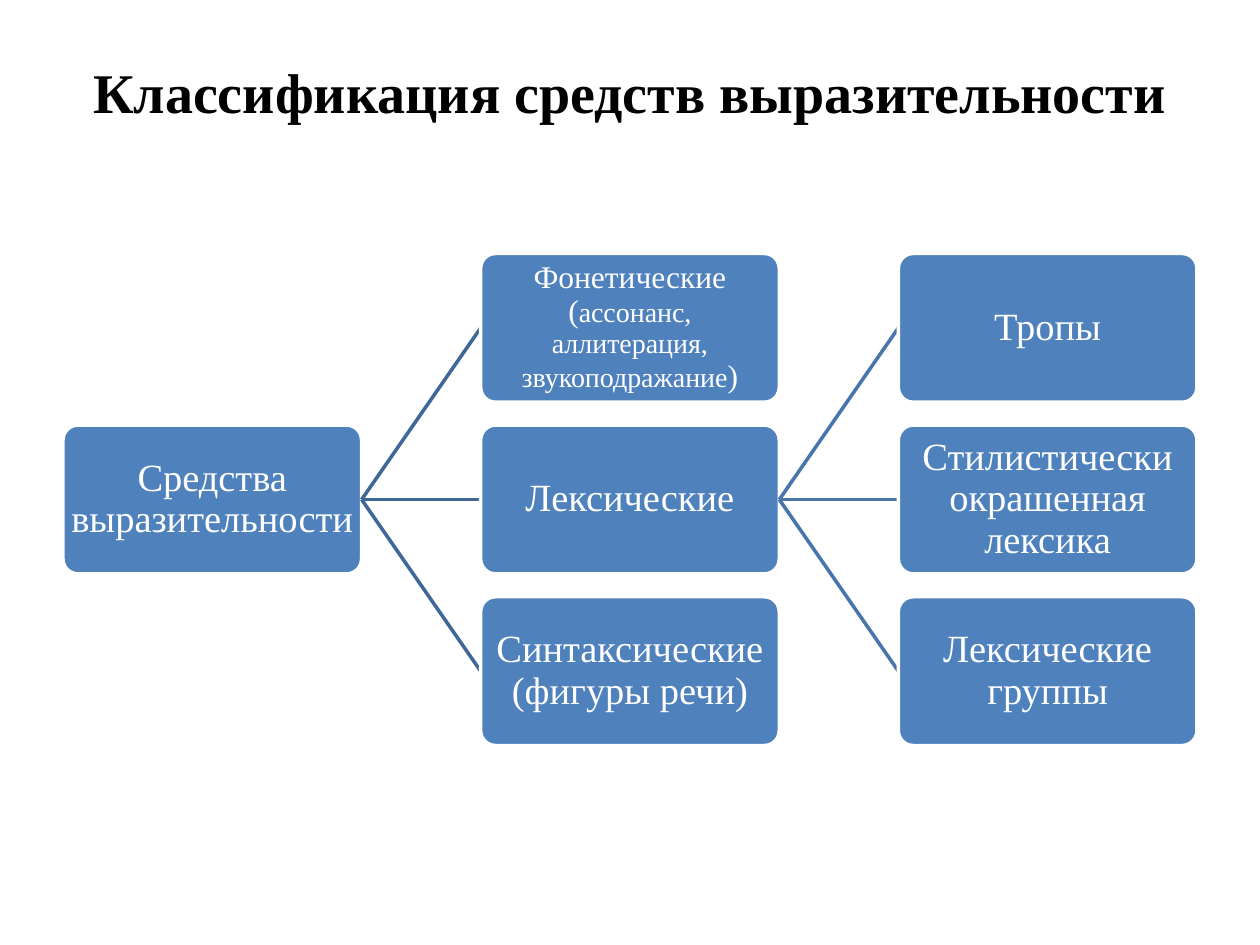
"""Builds a slide with a three-level tree of expressive means."""
from dataclasses import dataclass

from lxml import etree
from pptx import Presentation
from pptx.dml.color import RGBColor
from pptx.enum.shapes import MSO_CONNECTOR, MSO_SHAPE
from pptx.enum.text import MSO_ANCHOR, PP_ALIGN
from pptx.oxml.ns import qn
from pptx.util import Cm, Pt

STRAIGHT = MSO_CONNECTOR.STRAIGHT
ROUNDED = MSO_SHAPE.ROUNDED_RECTANGLE
MIDDLE = MSO_ANCHOR.MIDDLE
CENTER = PP_ALIGN.CENTER
LEFT_SITE, RIGHT_SITE = 1, 3


@dataclass(frozen=True)
class Theme:
    font: str = "Times New Roman"
    ink: RGBColor = RGBColor(0, 0, 0)
    white: RGBColor = RGBColor(255, 255, 255)
    box: RGBColor = RGBColor(0x4F, 0x81, 0xBD)
    links: tuple = (RGBColor(0x3F, 0x67, 0x97), RGBColor(0x48, 0x75, 0xAC))
    title_size: int = 32
    box_size: int = 22
    phonetic_size: int = 18
    example_size: int = 16
    stroke: int = 2


class Deck:
    def __init__(self, slide, theme):
        self.slide = slide
        self.theme = theme

    def fill_text(self, tf, runs, color, bold=False):
        tf.word_wrap = True
        tf.vertical_anchor = MIDDLE
        p = tf.paragraphs[0]
        p.alignment = CENTER
        p.font.name = self.theme.font
        p.font.color.rgb = color
        p.font.bold = bold
        for text, size in runs:
            r = p.add_run()
            r.text = text
            r.font.size = Pt(size)
        return p

    def title(self, text, x, y, w, h):
        sp = self.slide.shapes.add_textbox(Cm(x), Cm(y), Cm(w), Cm(h))
        self.fill_text(sp.text_frame, [(text, self.theme.title_size)], self.theme.ink, True)

    def box(self, runs, x, y, w, h):
        sp = self.slide.shapes.add_shape(ROUNDED, Cm(x), Cm(y), Cm(w), Cm(h))
        sp.adjustments[0] = 0.1
        sp.shadow.inherit = False
        sp.fill.solid()
        sp.fill.fore_color.rgb = self.theme.box
        sp.line.color.rgb = self.theme.white
        sp.line.width = Pt(self.theme.stroke)
        tf = sp.text_frame
        tf.margin_left = tf.margin_right = tf.margin_top = tf.margin_bottom = Cm(0.04)
        self.fill_text(tf, runs, self.theme.white).line_spacing = 0.9
        return sp

    def link(self, parent, child, color):
        line = self.slide.shapes.add_connector(STRAIGHT, 0, 0, 0, 0)
        line.begin_connect(parent, RIGHT_SITE)
        line.end_connect(child, LEFT_SITE)
        line.line.color.rgb = color
        line.line.width = Pt(self.theme.stroke)
        etree.SubElement(line._element.spPr, qn("a:effectLst"))
        child._element.addprevious(line._element)

    def tree(self, node, level=0, row=1, parent=None):
        label, children = node
        runs = [(label, self.theme.box_size)] if isinstance(label, str) else label
        sp = self.box(runs, 1.27 + level * 8.42, 5.11 + row * 3.46, 6.02, 3)
        if parent is not None:
            self.link(parent, sp, self.theme.links[level - 1])
        for i, child in enumerate(children):
            self.tree(child, level + 1, i, sp)


theme = Theme()
PHONETIC = [
    ("Фонетические (", theme.phonetic_size),
    ("ассонанс, аллитерация, звукоподражание", theme.example_size),
    (")", theme.phonetic_size),
]
MEANS = ("Средства выразительности", [
    (PHONETIC, []),
    ("Лексические", [
        ("Тропы", []),
        ("Стилистически окрашенная лексика", []),
        ("Лексические группы", []),
    ]),
    ("Синтаксические (фигуры речи)", []),
])

prs = Presentation()
prs.slide_width, prs.slide_height = Cm(25.4), Cm(19.05)
deck = Deck(prs.slides.add_slide(prs.slide_layouts[6]), theme)
deck.title("Классификация средств выразительности", 1.27, 0.76, 22.86, 2.16)
deck.tree(MEANS)
prs.save("out.pptx")
